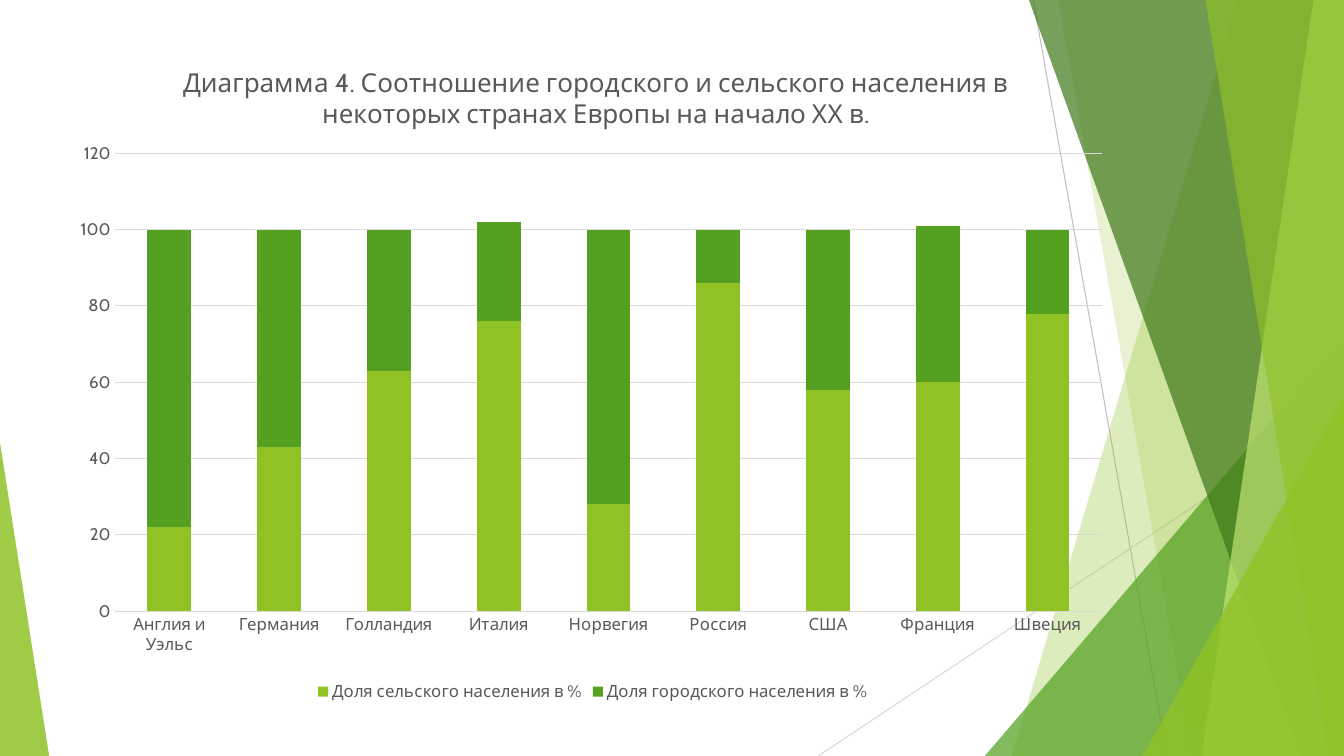
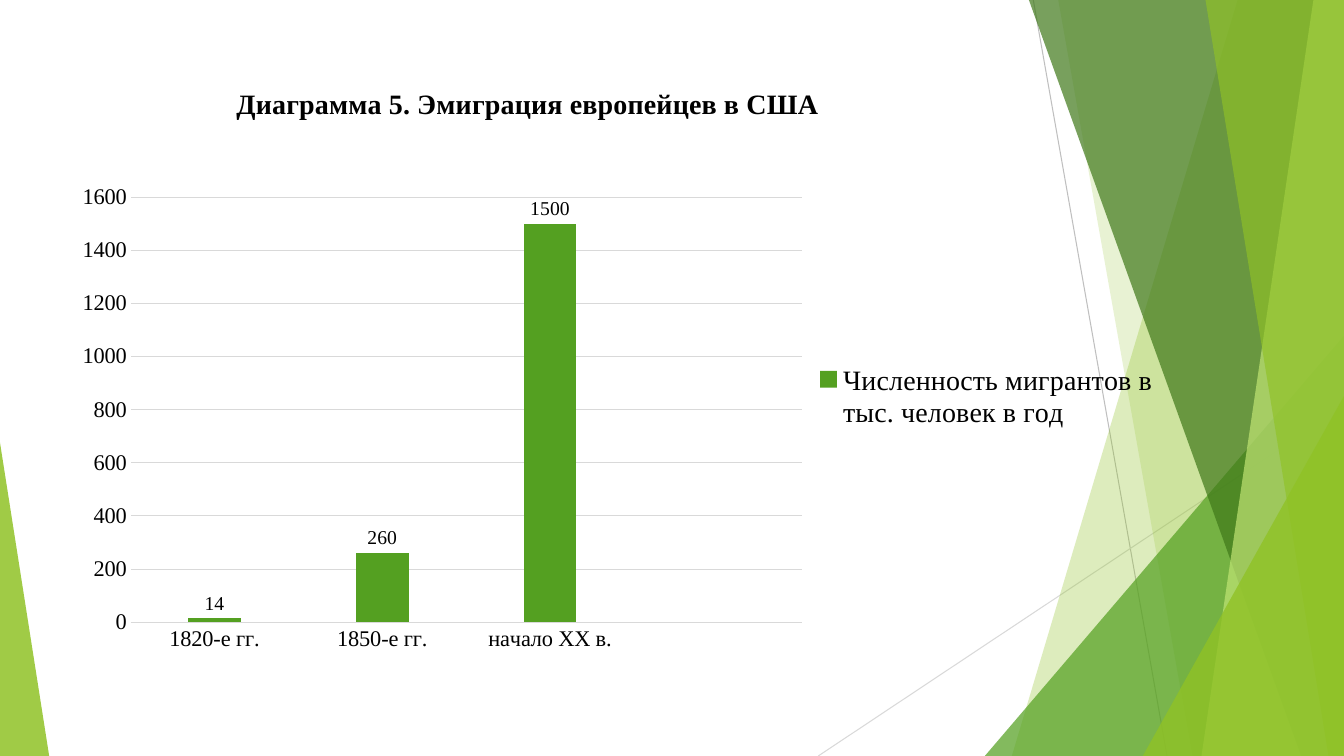
from lxml.etree import SubElement
from pptx import Presentation
from pptx.chart.data import CategoryChartData
from pptx.dml.color import RGBColor
from pptx.enum.chart import XL_CHART_TYPE, XL_LABEL_POSITION, XL_LEGEND_POSITION, XL_TICK_MARK
from pptx.enum.shapes import MSO_CONNECTOR, MSO_SHAPE
from pptx.oxml import parse_xml
from pptx.oxml.ns import nsdecls, qn
from pptx.util import Cm, Pt

WIDTH, HEIGHT = 33.87, 19.05
LIME, GREEN, DARK_GREEN, PALE_LIME = "90C226", "54A021", "3F7819", "C0E474"
GREY, LINE_GREY, GRID_GREY, BLACK = "595959", "BFBFBF", "D9D9D9", "000000"


def rgb(color):
    return RGBColor.from_string(color)


def style_font(font, name, size, color, bold=False):
    font.name, font.size, font.bold = name, Pt(size), bold
    font.color.rgb = rgb(color)


def style_line(line, color):
    line.color.rgb = rgb(color)
    line.width = Pt(0.75)


def style_facet(sp, color, opacity):
    """Fill a borderless shape with a colour of the given opacity in percent."""
    sp.shadow.inherit = False
    sp.line.fill.background()
    sp.fill.solid()
    sp.fill.fore_color.rgb = rgb(color)
    srgb = sp.fill._xPr.find(".//" + qn("a:srgbClr"))
    SubElement(srgb, qn("a:alpha"), val=str(opacity * 1000))


def add_thin_line(s, x1, y1, x2, y2, color):
    line = s.shapes.add_connector(MSO_CONNECTOR.STRAIGHT, Cm(x1), Cm(y1), Cm(x2), Cm(y2))
    style_line(line.line, color)
    SubElement(line._element.spPr, qn("a:effectLst"))


def add_band(s, top_x, bottom_x, color, opacity):
    """Fill the slide from a slanted left edge to the right border."""
    builder = s.shapes.build_freeform(Cm(top_x), 0)
    corners = [(WIDTH, 0), (WIDTH, HEIGHT), (bottom_x, HEIGHT)]
    builder.add_line_segments([(Cm(x), Cm(y)) for x, y in corners], close=True)
    style_facet(builder.convert_to_shape(), color, opacity)


def add_corner(s, left, top, width, apex, color, opacity):
    """Stand a triangle on the bottom edge; apex is 0 for left, 1 for right."""
    sp = s.shapes.add_shape(MSO_SHAPE.ISOSCELES_TRIANGLE, Cm(left), Cm(top),
                            Cm(width), Cm(HEIGHT - top))
    sp.adjustments[0] = apex
    style_facet(sp, color, opacity)


def add_facets(s):
    add_thin_line(s, 26.04, 0, 29.41, HEIGHT, LINE_GREY)
    add_thin_line(s, WIDTH, 10.24, 20.62, HEIGHT, GRID_GREY)
    add_band(s, 31.19, 25.5, LIME, 30)
    add_band(s, 26.67, 30.05, LIME, 20)
    add_corner(s, 24.82, 8.46, WIDTH - 24.82, 1, GREEN, 72)
    add_band(s, 25.93, 32.79, DARK_GREEN, 70)
    add_band(s, 33.1, 30.28, PALE_LIME, 70)
    add_band(s, 30.38, 33.48, LIME, 65)
    add_corner(s, 28.8, 9.98, WIDTH - 28.8, 1, LIME, 80)
    add_corner(s, 0, 11.15, 1.24, 0, LIME, 85)


def set_layout(parent, after, x, y, w=None, h=None, inner=False):
    """Place a chart part by fractions of the chart, behind its child named after."""
    for old in parent.findall(qn("c:layout")):
        parent.remove(old)
    layout = parse_xml(f"<c:layout {nsdecls('c')}><c:manualLayout/></c:layout>")
    manual = layout[0]
    if inner:
        SubElement(manual, qn("c:layoutTarget"), val="inner")
    for tag in ("xMode", "yMode"):
        SubElement(manual, qn("c:" + tag), val="edge")
    for tag, value in zip("xywh", (x, y, w, h)):
        if value is not None:
            SubElement(manual, qn("c:" + tag), val=str(value))
    index = parent.index(parent.find(qn(after))) + 1 if after else 0
    parent.insert(index, layout)


def add_column_chart(s, kind, box, categories, series, font, color, axis_size, axis_max, step,
                     gap, overlap, plot_area):
    """Add a column chart; series holds name, values and colour of each."""
    data = CategoryChartData()
    data.categories = categories
    for name, values, _ in series:
        data.add_series(name, values)
    chart = s.shapes.add_chart(kind, *map(Cm, box), data).chart
    style_font(chart.font, font, 10, BLACK)

    plot = chart.plots[0]
    plot.gap_width, plot.overlap, plot.vary_by_categories = gap, overlap, False
    for ser, (_, _, fill) in zip(plot.series, series):
        ser.format.fill.solid()
        ser.format.fill.fore_color.rgb = rgb(fill)

    for axis in (chart.category_axis, chart.value_axis):
        axis.major_tick_mark = axis.minor_tick_mark = XL_TICK_MARK.NONE
        style_font(axis.tick_labels.font, font, axis_size, color)
    style_line(chart.category_axis.format.line, GRID_GREY)
    axis = chart.value_axis
    axis.minimum_scale, axis.maximum_scale, axis.major_unit = 0, axis_max, step
    axis.format.line.fill.background()
    style_line(axis.major_gridlines.format.line, GRID_GREY)
    set_layout(chart._chartSpace.chart.plotArea, None, *plot_area, inner=True)
    return chart


def add_title(chart, text, x, y, *font):
    tf = chart.chart_title.text_frame
    tf.text = text
    style_font(tf.paragraphs[0].runs[0].font, *font)
    chart.chart_title.include_in_layout = False
    set_layout(chart.chart_title._element, "c:tx", x, y)


def add_legend(chart, *font):
    chart.has_legend = True
    chart.legend.position = XL_LEGEND_POSITION.BOTTOM
    chart.legend.include_in_layout = False
    style_font(chart.legend.font, *font)


def add_population_chart(s):
    countries = ["Англия и Уэльс", "Германия", "Голландия", "Италия", "Норвегия",
                 "Россия", "США", "Франция", "Швеция"]
    series = [
        ("Доля сельского населения в %", [22, 43, 63, 76, 28, 86, 58, 60, 78], LIME),
        ("Доля городского населения в %", [78, 57, 37, 26, 72, 14, 42, 41, 22], GREEN),
    ]
    font = "Cabin"
    chart = add_column_chart(s, XL_CHART_TYPE.COLUMN_STACKED, (1.55, 0.81, 26.77, 16.97),
                             countries, series, font, GREY, axis_size=12, axis_max=120, step=20,
                             gap=150, overlap=100, plot_area=(0.05, 0.18, 0.93, 0.68))
    add_title(chart, "Диаграмма 4. Соотношение городского и сельского населения в "
              "некоторых странах Европы на начало ХХ в.", 0.11, 0.04, font, 18.6, GREY)
    add_legend(chart, font, 12, GREY)


def add_emigration_chart(s):
    periods = ["1820-е гг.", "1850-е гг.", "начало ХХ в.", ""]
    series = [("Численность мигрантов в тыс. человек в год", [14, 260, 1500, None], GREEN)]
    font = "Times New Roman"
    chart = add_column_chart(s, XL_CHART_TYPE.COLUMN_CLUSTERED, (1.32, 1.4, 28.19, 16.23),
                             periods, series, font, BLACK, axis_size=16, axis_max=1600, step=200,
                             gap=219, overlap=-27, plot_area=(0.07, 0.22, 0.6, 0.66))
    add_title(chart, "Диаграмма 5. Эмиграция европейцев в США", 0.16, 0.04,
              font, 20, BLACK, True)
    add_legend(chart, font, 20, BLACK)
    set_layout(chart.legend._element, "c:legendPos", 0.68, 0.47, 0.31, 0.12)

    labels = chart.plots[0].series[0].data_labels
    labels.show_value = True
    labels.position = XL_LABEL_POSITION.OUTSIDE_END
    style_font(labels.font, font, 14, BLACK)


def main():
    prs = Presentation()
    prs.slide_width, prs.slide_height = Cm(WIDTH), Cm(HEIGHT)
    for add_content in (add_population_chart, add_emigration_chart):
        s = prs.slides.add_slide(prs.slide_layouts[6])
        add_facets(s)
        add_content(s)
    prs.save("out.pptx")


if __name__ == "__main__":
    main()
